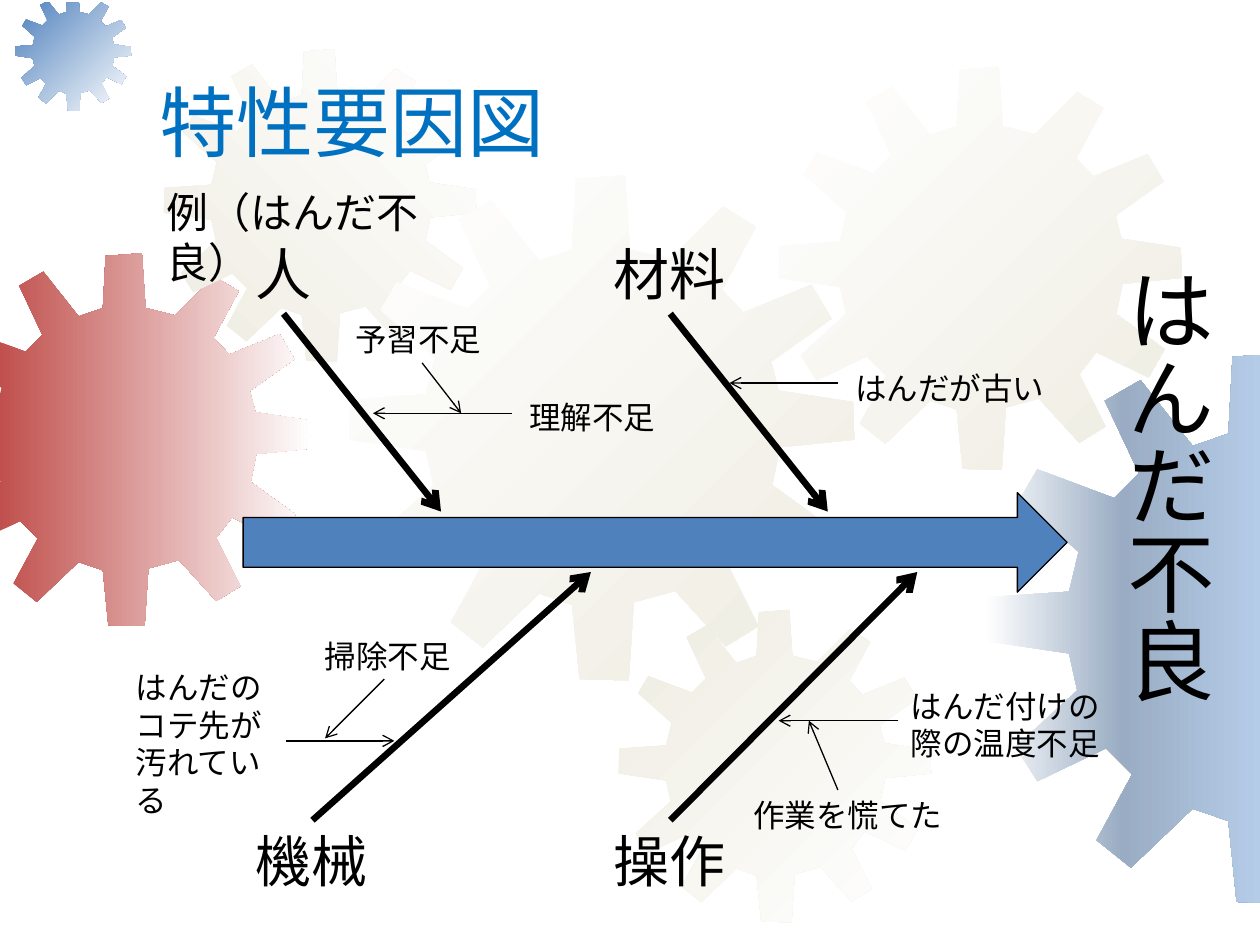
from dataclasses import dataclass
from typing import NamedTuple, Optional

from lxml import etree
from pptx import Presentation
from pptx import util as u
from pptx.dml.color import RGBColor
from pptx.enum import shapes, text
from pptx.oxml import ns


@dataclass(frozen=True)
class Theme:
    font: str = "Noto Sans CJK JP"
    latin: str = "Arial Narrow"
    title: str = "0070C0"
    ink: str = "000000"
    spine: str = "4F81BD"
    red: str = "C0504D"
    cream: str = "EEECE1"
    white: str = "FFFFFF"
    steel: str = "99ACC3"
    sky: str = "B5CCE8"
    title_size: int = 44
    effect_size: int = 50
    category_size: int = 32
    example_size: int = 24
    cause_size: int = 18
    bone: float = 3.75
    thin: float = 0.75


T = Theme()


class Gear(NamedTuple):
    left: float
    top: float
    size: float
    colors: tuple[str, ...]
    angle: int = 0
    alpha: int = 100


class Label(NamedTuple):
    content: str
    left: float
    top: float
    width: float
    height: float
    size: int = T.cause_size
    wrap: bool = False
    color: str = T.ink
    font: str = T.font
    vertical: bool = False
    anchor: text.MSO_ANCHOR = text.MSO_ANCHOR.TOP


class Arrow(NamedTuple):
    x1: float
    y1: float
    x2: float
    y2: float
    weight: float = T.thin


GEAR_SPAN = 4.01
GEAR_OUTLINE = [
    (2.55, .67), (2.23, .59), (2.19, 0), (1.8, .03), (1.77, .59), (1.51, .68),
    (1.13, .2), (.87, .35), (1.12, .88), (.94, 1.06), (.38, .85), (.25, 1.07),
    (.68, 1.45), (.61, 1.74), (.01, 1.78), (0, 2.1), (.61, 2.19), (.67, 2.46),
    (.22, 2.87), (.38, 3.12), (.88, 2.88), (1.07, 3.07), (.81, 3.55), (1.06, 3.75),
    (1.51, 3.32), (1.77, 3.41), (1.83, 4), (2.22, 4.01), (2.26, 3.39), (2.59, 3.3),
    (2.99, 3.74), (3.25, 3.58), (2.99, 3.06), (3.16, 2.84), (3.68, 3.09), (3.84, 2.81),
    (3.36, 2.46), (3.42, 2.16), (4.01, 2.1), (4, 1.8), (3.41, 1.71), (3.35, 1.48),
    (3.83, 1.14), (3.67, .87), (3.13, 1.09), (2.96, .91), (3.23, .41), (2.97, .25),
]
GEARS = [
    Gear(-.49, 2.01, 2.96, (T.red, T.white)),
    Gear(.12, -.04, .92, (T.spine, T.white), 45),
    Gear(1.3, .39, 2.48, (T.cream, T.white), 315),
    Gear(2.77, 1.39, 4.01, (T.white, T.cream), 45),
    Gear(0, 5.25, 3.74, (T.white,), alpha=50),
    Gear(4.91, 4.84, 2.48, (T.cream, T.white), 45),
    Gear(6.18, .53, 3.2, (T.white, T.cream), 45),
    Gear(7.82, 2.8, 4.37, (T.white, T.steel, T.sky)),
]
CATEGORY_TOP, CATEGORY_BOTTOM = 1.85, 6.51
LABELS = [
    Label("特性要因図", 1.17, .33, 8.5, 1.25, T.title_size, True, T.title,
          anchor=text.MSO_ANCHOR.MIDDLE),
    Label("人", 1.93, CATEGORY_TOP, .65, .64, T.category_size),
    Label("材料", 4.77, CATEGORY_TOP, 1.1, .64, T.category_size),
    Label("機械", 1.93, CATEGORY_BOTTOM, 1.1, .64, T.category_size),
    Label("操作", 4.77, CATEGORY_BOTTOM, 1.1, .64, T.category_size),
    Label("はんだ不良", 8.7, 2.02, 1.04, 4.57, T.effect_size, True, vertical=True),
    Label("はんだ付けの際の温度不足", 7.13, 5.4, 1.89, .71, wrap=True),
    Label("はんだのコテ先が汚れている", .98, 5.25, 1.26, 1.31, wrap=True),
    Label("はんだが古い", 6.69, 2.88, 1.72, .4),
    Label("掃除不足", 2.48, 5.01, 1.21, .4),
    Label("理解不足", 4.1, 3.11, 1.21, .4),
    Label("作業を慌てた", 5.88, 6.27, 1.72, .4),
    Label("予習不足", 2.72, 2.49, 1.21, .4),
    Label("例（はんだ不良）", 1.22, 1.43, 2.52, .5, T.example_size, True, font=T.latin),
]
ARROWS = [
    Arrow(2.25, 2.49, 3.5, 4.06, T.bone),
    Arrow(5.32, 2.49, 6.57, 4.06, T.bone),
    Arrow(2.48, 6.51, 4.69, 4.54, T.bone),
    Arrow(5.32, 6.51, 7.28, 4.54, T.bone),
    Arrow(2.27, 5.88, 3.13, 5.88),
    Arrow(4.06, 3.28, 2.96, 3.28),
    Arrow(6.65, 3.04, 5.79, 3.04),
    Arrow(3.05, 5.39, 2.58, 5.86),
    Arrow(6.65, 6.27, 6.42, 5.72),
    Arrow(3.35, 2.88, 3.66, 3.28),
    Arrow(7.13, 5.72, 6.18, 5.72),
]


def add_xml(parent, tag: str, **attrs):
    return etree.SubElement(parent, ns.qn(tag), attrs)


def clip(points: list, axis: int, limit: float, sign: int) -> list:
    kept = []
    for a, b in zip(points[-1:] + points[:-1], points):
        a_in, b_in = (sign * (q[axis] - limit) >= 0 for q in (a, b))
        if a_in != b_in:
            t = (limit - a[axis]) / (b[axis] - a[axis])
            kept.append(tuple(m + t * (n - m) for m, n in zip(a, b)))
        if b_in:
            kept.append(b)
    return kept


def draw_gear(s, gear: Gear) -> None:
    k = gear.size / GEAR_SPAN
    points = [(gear.left + x * k, gear.top + y * k) for x, y in GEAR_OUTLINE]
    for axis, limit, sign in ((0, 0, 1), (0, 10, -1), (1, .02, 1), (1, 7.5, -1)):
        points = clip(points, axis, limit, sign)
    corners = [(u.Inches(x), u.Inches(y)) for x, y in points]
    builder = s.shapes.build_freeform(*corners[0], scale=1.0)
    builder.add_line_segments(corners[1:], close=True)
    sp = builder.convert_to_shape()
    sp.shadow.inherit = False
    sp.line.fill.background()
    if len(gear.colors) == 1:
        sp.fill.solid()
        sp.fill.fore_color.rgb = RGBColor.from_string(gear.colors[0])
        color = sp.fill._xPr.find(".//" + ns.qn("a:srgbClr"))
        add_xml(color, "a:alpha", val=str(gear.alpha * 1000))
        return
    sp.fill.gradient()
    grad = sp.fill._xPr.find(ns.qn("a:gradFill"))
    for child in list(grad):
        grad.remove(child)
    stops = add_xml(grad, "a:gsLst")
    for i, color in enumerate(gear.colors):
        stop = add_xml(stops, "a:gs", pos=str(100000 * i // (len(gear.colors) - 1)))
        add_xml(stop, "a:srgbClr", val=color)
    add_xml(grad, "a:lin", ang=str(gear.angle * 60000), scaled="0")


def draw_spine(s) -> None:
    sp = s.shapes.add_shape(shapes.MSO_SHAPE.RIGHT_ARROW, u.Inches(1.93),
                            u.Inches(3.91), u.Inches(6.54), u.Inches(.79))
    sp.shadow.inherit = False
    sp.fill.solid()
    sp.fill.fore_color.rgb = RGBColor.from_string(T.spine)
    sp.line.color.rgb = RGBColor.from_string(T.ink)
    sp.line.width = u.Pt(T.thin)


def draw_label(s, label: Label) -> None:
    box = (u.Inches(v) for v in (label.left, label.top, label.width, label.height))
    tf = s.shapes.add_textbox(*box).text_frame
    tf.word_wrap = label.wrap
    tf.vertical_anchor = label.anchor
    tf.text = label.content
    p = tf.paragraphs[0]
    if label.vertical:
        tf._txBody.bodyPr.set("vert", "eaVert")
        p.alignment = text.PP_ALIGN.CENTER
    font = p.runs[0].font
    font.size = u.Pt(label.size)
    font.color.rgb = RGBColor.from_string(label.color)
    font.name = label.font
    add_xml(font._element, "a:ea", typeface=label.font)


def draw_arrow(s, arrow: Arrow) -> None:
    ends = (u.Inches(v) for v in arrow[:4])
    line = s.shapes.add_connector(shapes.MSO_CONNECTOR.STRAIGHT, *ends)
    line.line.color.rgb = RGBColor.from_string(T.ink)
    line.line.width = u.Pt(arrow.weight)
    add_xml(line.line._get_or_add_ln(), "a:tailEnd", type="arrow")
    add_xml(line._element.spPr, "a:effectLst")


def main() -> None:
    prs = Presentation()
    prs.slide_width, prs.slide_height = u.Inches(10), u.Inches(7.5)
    s = prs.slides.add_slide(prs.slide_layouts[6])
    for gear in GEARS:
        draw_gear(s, gear)
    draw_spine(s)
    for label in LABELS:
        draw_label(s, label)
    for arrow in ARROWS:
        draw_arrow(s, arrow)
    prs.save("out.pptx")


if __name__ == "__main__":
    main()
